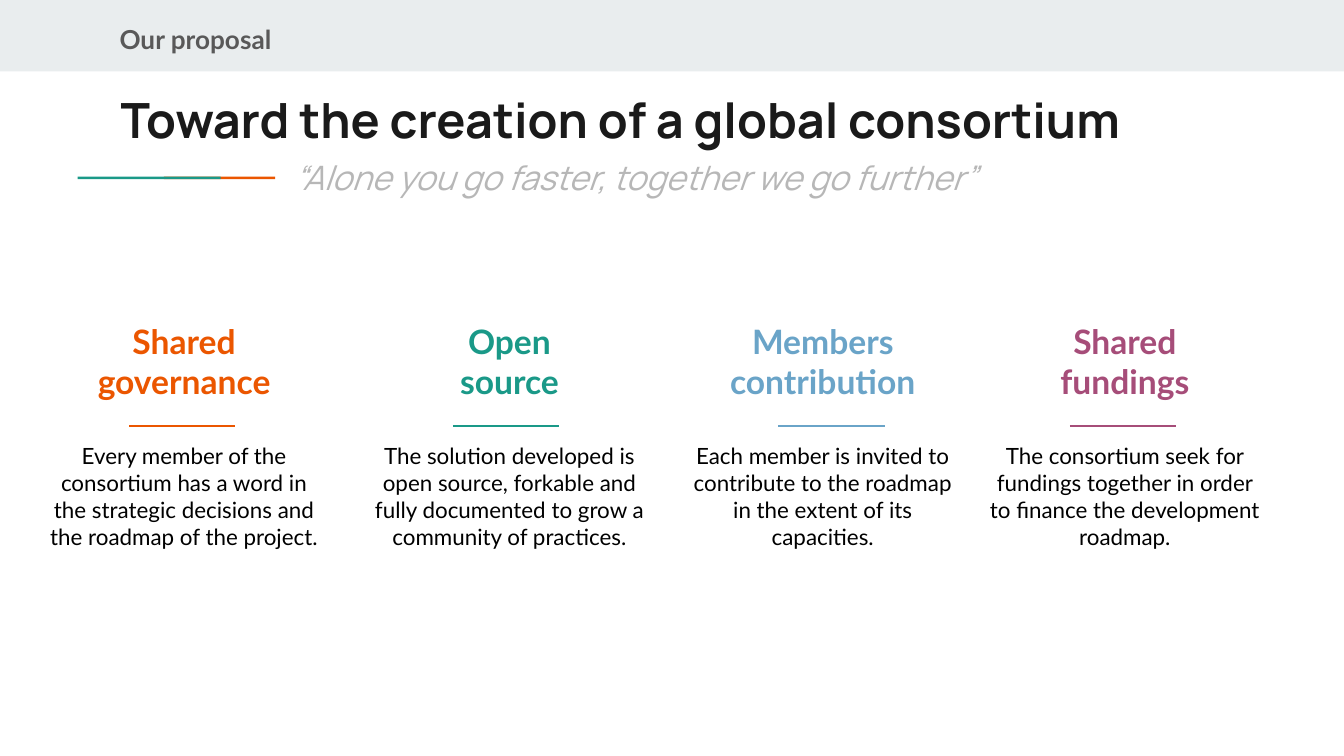
from pptx import Presentation
from pptx.dml.color import RGBColor
from pptx.enum.shapes import MSO_CONNECTOR, MSO_SHAPE
from pptx.enum.text import PP_ALIGN
from pptx.oxml.ns import qn
from pptx.util import Cm, Pt
from lxml.etree import SubElement


def color(value):
    return RGBColor.from_string(value)


def add_text(left, top, width, height, paragraphs, align=PP_ALIGN.LEFT):
    frame = slide.shapes.add_textbox(Cm(left), Cm(top), Cm(width), Cm(height)).text_frame
    frame.word_wrap = True
    frame.margin_left = frame.margin_right = Cm(0.25)
    frame.margin_top = frame.margin_bottom = Cm(0.25)
    for index, (words, font, size, ink, bold, italic, gap) in enumerate(paragraphs):
        paragraph = frame.paragraphs[0] if index == 0 else frame.add_paragraph()
        paragraph.alignment = align
        paragraph.space_before = Pt(gap)
        run = paragraph.add_run()
        run.text = words
        run.font.name = font
        run.font.size = Pt(size)
        run.font.bold = bold
        run.font.italic = italic
        run.font.color.rgb = color(ink)


presentation = Presentation()
presentation.slide_width = Cm(25.4)
presentation.slide_height = Cm(14.29)
slide = presentation.slides.add_slide(presentation.slide_layouts[6])

for left, top, width, height, fill in [
    (0, 0, 25.4, 1.35, "E9EDEE"),
    (3.1, 3.34, 2.1, 0.05, "EB5600"),
    (1.47, 3.34, 2.7, 0.05, "1A9988"),
]:
    band = slide.shapes.add_shape(MSO_SHAPE.RECTANGLE, Cm(left), Cm(top), Cm(width), Cm(height))
    band.shadow.inherit = False
    band.fill.solid()
    band.fill.fore_color.rgb = color(fill)
    band.line.fill.background()

add_text(5.31, 2.72, 22.6, 1.5, [
    ("“Alone you go faster, together we go further”", "Manrope", 18, "B7B7B7", False, True, 0),
])
add_text(2.03, 1.45, 21.18, 1.5, [
    ("Toward the creation of a global consortium", "Manrope", 26, "1A1A1A", True, False, 0),
])
add_text(2.01, 0.2, 4.95, 1.02, [("Our proposal", "Lato", 14, "595959", True, False, 0)])

pillars = [
    (0.66, 2.44, "EB5600", ["Shared governance"],
     "Every member of the consortium has a word in the strategic decisions "
     "and the roadmap of the project."),
    (6.81, 8.56, "1A9988", ["Open", "source"],
     "The solution developed is open source, forkable and fully documented "
     "to grow a community of practices."),
    (12.73, 14.71, "6AA4C8", ["Members contribution"],
     "Each member is invited to contribute to the roadmap in the extent of its capacities."),
    (18.44, 20.22, "A64D79", ["Shared", "fundings"],
     "The consortium seek for fundings together in order to finance the development roadmap."),
]
for left, rule_left, accent, heading, description in pillars:
    paragraphs = [(line, "Lato", 18, accent, True, False, 0) for line in heading]
    paragraphs.append((description, "Lato", 12, "000000", False, False, 21.6))
    add_text(left, 5.82, 5.64, 7.29, paragraphs, PP_ALIGN.CENTER)

    rule = slide.shapes.add_connector(
        MSO_CONNECTOR.STRAIGHT, Cm(rule_left), Cm(8.05), Cm(rule_left + 2.01), Cm(8.05))
    rule.line.color.rgb = color(accent)
    rule.line.width = Pt(0.75)
    SubElement(rule._element.spPr, qn("a:effectLst"))

presentation.save("out.pptx")
